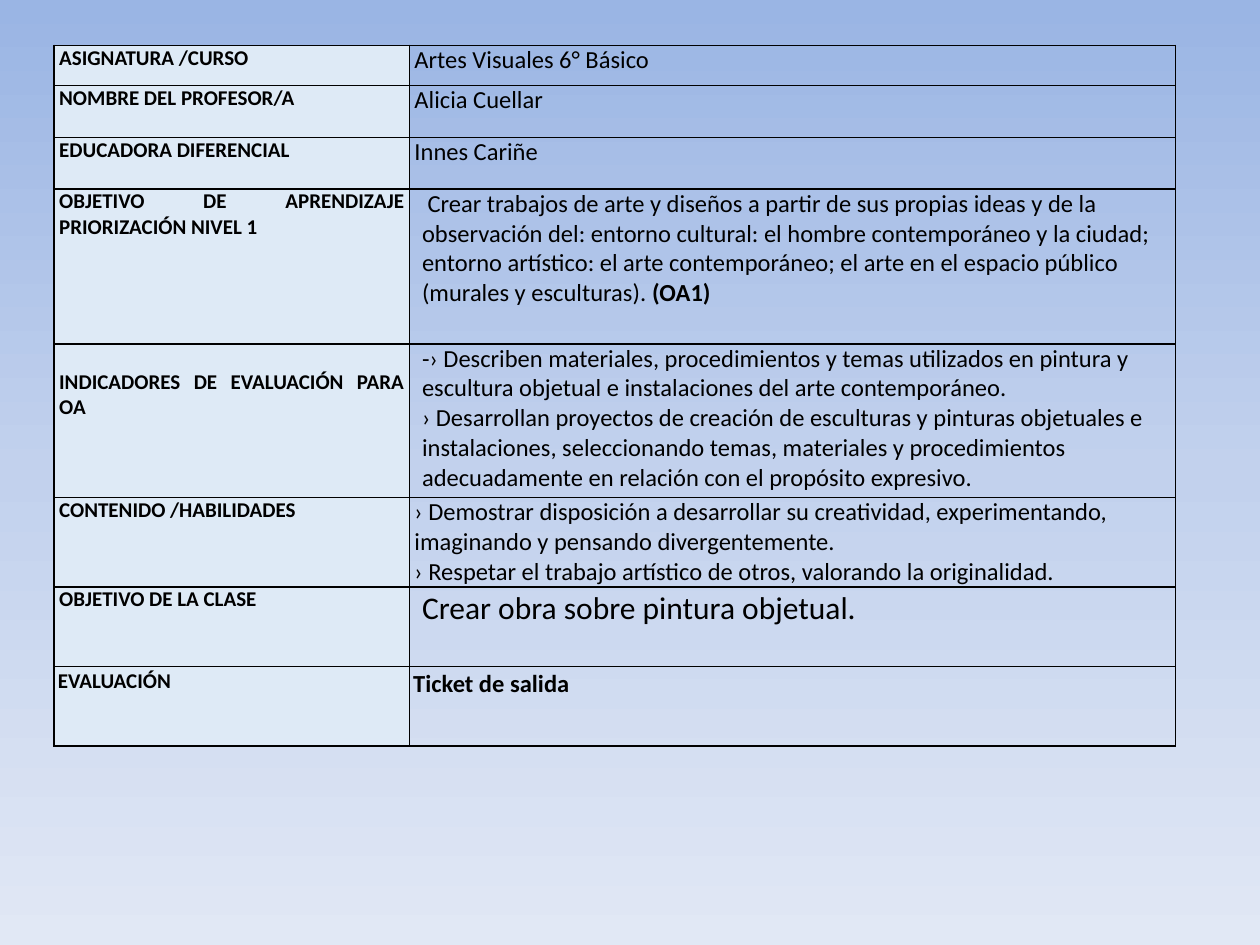
from copy import deepcopy

from lxml.etree import SubElement
from pptx import Presentation
from pptx.dml.color import RGBColor
from pptx.enum.text import PP_ALIGN
from pptx.oxml.ns import qn
from pptx.util import Inches, Pt

BLACK, LABEL_FILL = "000000", "DEEAF6"
BACKGROUND = [(0, "9AB5E4"), (0.5, "C2D1ED"), (1, "E1E8F5")]
LEFT, TOP = 0.43, 0.36
COLUMN_WIDTHS = [2.82, 6.08]
NARROW, WIDE, EVEN = (0.04, 0), (0.1, 0), (0.03, 0.02)
LABEL = {"size": Pt(12), "bold": True}
BODY = {"size": Pt(14), "bold": False}
STRONG = {"size": Pt(14), "bold": True}
GOAL = {"size": Pt(18), "bold": False}

ROWS = [
    {"height": 0.32, "label": "ASIGNATURA /CURSO",
     "content": [[("Artes Visuales 6° Básico", BODY)]]},
    {"height": 0.41, "label": "NOMBRE DEL PROFESOR/A",
     "content": [[("Alicia Cuellar", BODY)]]},
    {"height": 0.41, "label": "EDUCADORA DIFERENCIAL",
     "content": [[("Innes Cariñe", BODY)]]},
    {"height": 1.23, "label": "OBJETIVO DE APRENDIZAJE PRIORIZACIÓN NIVEL 1",
     "margins": WIDE, "align": PP_ALIGN.LEFT,
     "content": [[
         (" Crear trabajos de arte y diseños a partir de sus propias ideas y de la "
          "observación del: entorno cultural: el hombre contemporáneo y la ciudad; "
          "entorno artístico: el arte contemporáneo; el arte en el espacio público "
          "(murales y esculturas). ", BODY),
         ("(OA1)", STRONG)]]},
    {"height": 1.22, "label": "INDICADORES DE EVALUACIÓN PARA OA",
     "label_margins": (0.04, 0.2), "margins": WIDE, "align": PP_ALIGN.LEFT,
     "content": [
         [("-› Describen materiales, procedimientos y temas utilizados en pintura y "
           "escultura objetual e instalaciones del arte contemporáneo.", BODY)],
         [("› Desarrollan proyectos de creación de esculturas y pinturas objetuales e "
           "instalaciones, seleccionando temas, materiales y procedimientos "
           "adecuadamente en relación con el propósito expresivo.", BODY)]]},
    {"height": 0.71, "label": "CONTENIDO /HABILIDADES", "align": PP_ALIGN.LEFT,
     "content": [
         [("› Demostrar disposición a desarrollar su creatividad, experimentando, "
           "imaginando y pensando divergentemente.", BODY)],
         [("› Respetar el trabajo artístico de otros, valorando la originalidad.", BODY)]]},
    {"height": 0.63, "label": "OBJETIVO DE LA CLASE", "margins": WIDE,
     "spacing": {"line_spacing": 1.07, "space_after": Pt(8)},
     "content": [[("Crear obra sobre pintura objetual.", GOAL)]]},
    {"height": 0.63, "label": "EVALUACIÓN", "label_margins": EVEN, "margins": EVEN,
     "content": [[("Ticket de salida", STRONG)]]},
]


def color(value):
    """Turn a hex string into a colour."""
    return RGBColor.from_string(value)


def set_all(target, values):
    """Set every attribute named in a dict."""
    for name, value in values.items():
        setattr(target, name, value)


def paint_background(slide):
    """Fill the slide with a vertical three-stop gradient."""
    fill = slide.background.fill
    fill.gradient()
    fill.gradient_angle = 270
    stop_list = next(slide.element.iter(qn("a:gsLst")))
    stop_list.append(deepcopy(stop_list[-1]))
    for stop, (position, value) in zip(fill.gradient_stops, BACKGROUND):
        stop.position = position
        stop.color.rgb = color(value)


def add_borders(cell):
    """Draw a thin black line on each side of a cell."""
    properties = cell._tc.get_or_add_tcPr()
    for index, side in enumerate(("a:lnL", "a:lnR", "a:lnT", "a:lnB")):
        line = properties.makeelement(qn(side), {"w": str(Pt(1))})
        fill = SubElement(line, qn("a:solidFill"))
        SubElement(fill, qn("a:srgbClr"), val=BLACK)
        properties.insert(index, line)


def fill_cell(cell, paragraphs, margins, align, spacing):
    """Write formatted paragraphs into a cell."""
    side, top = map(Inches, margins)
    set_all(cell, {"margin_left": side, "margin_right": side,
                   "margin_top": top, "margin_bottom": 0})
    frame = cell.text_frame
    for index, runs in enumerate(paragraphs):
        paragraph = frame.add_paragraph() if index else frame.paragraphs[0]
        set_all(paragraph, {"alignment": align, **spacing})
        for text, style in runs:
            run = paragraph.add_run()
            run.text = text
            set_all(run.font, {"name": "Calibri", **style})
            run.font.color.rgb = color(BLACK)
    add_borders(cell)


def add_plan_table(slide):
    """Build the class plan table."""
    heights = [row["height"] for row in ROWS]
    box = map(Inches, (LEFT, TOP, sum(COLUMN_WIDTHS), sum(heights)))
    table = slide.shapes.add_table(len(ROWS), len(COLUMN_WIDTHS), *box).table
    set_all(table, {"first_row": False, "horz_banding": False})
    for column, width in zip(table.columns, COLUMN_WIDTHS):
        column.width = Inches(width)
    for index, row in enumerate(ROWS):
        table.rows[index].height = Inches(row["height"])
        label, content = table.cell(index, 0), table.cell(index, 1)
        label.fill.solid()
        label.fill.fore_color.rgb = color(LABEL_FILL)
        content.fill.background()
        fill_cell(label, [[(row["label"], LABEL)]],
                  row.get("label_margins", NARROW), PP_ALIGN.JUSTIFY, {})
        fill_cell(content, row["content"], row.get("margins", NARROW),
                  row.get("align", PP_ALIGN.JUSTIFY), row.get("spacing", {}))


def main():
    """Create and save the presentation."""
    presentation = Presentation()
    set_all(presentation, {"slide_width": Inches(10), "slide_height": Inches(7.5)})
    slide = presentation.slides.add_slide(presentation.slide_layouts[6])
    paint_background(slide)
    add_plan_table(slide)
    presentation.save("out.pptx")


if __name__ == "__main__":
    main()
